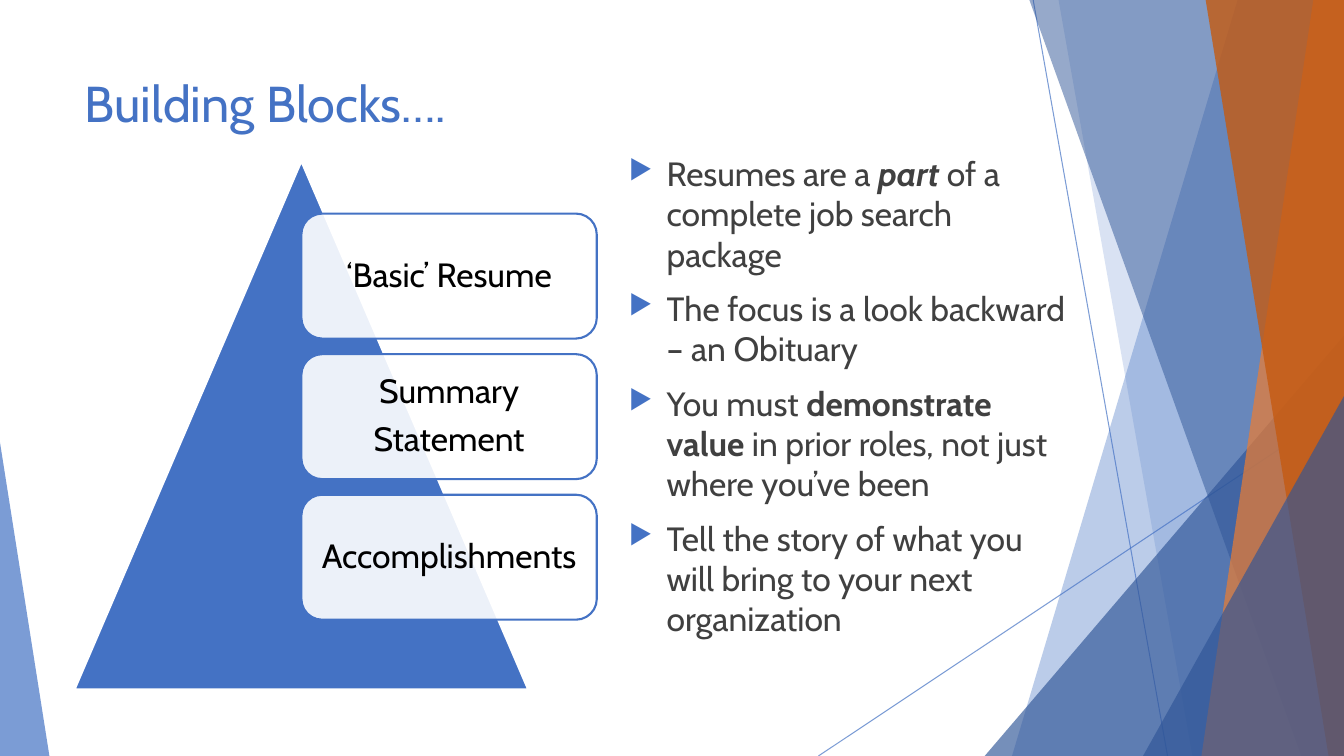
from dataclasses import dataclass
from lxml.etree import SubElement as Sub
from pptx import Presentation
from pptx.dml.color import RGBColor
from pptx.enum.shapes import MSO_CONNECTOR as Link, MSO_SHAPE as Kind
from pptx.enum.text import MSO_ANCHOR as Anchor, PP_ALIGN as Align
from pptx.oxml.ns import qn
from pptx.util import Pt

BLUE = RGBColor(0x44, 0x72, 0xC4)
NAVY = RGBColor(0x2F, 0x55, 0x97)
AMBER = RGBColor(0xED, 0x7D, 0x31)
RUST = RGBColor(0xC5, 0x5A, 0x11)
WHITE = RGBColor(0xFF, 0xFF, 0xFF)
BLACK = RGBColor(0, 0, 0)
GREY = RGBColor(0x40, 0x40, 0x40)
FONT = "Cabin"
WIDE, HIGH = 960, 540


@dataclass
class Ray:
    x1: float
    y1: float
    x2: float
    y2: float


@dataclass
class Band:
    top: float
    base: float
    color: RGBColor
    alpha: int


@dataclass
class Wedge:
    left: float
    top: float
    width: float
    peak: float
    color: RGBColor
    alpha: int


@dataclass
class Bit:
    text: str
    bold: bool = False
    slant: bool = False


RAYS = [Ray(738, 0, 834, HIGH), Ray(WIDE, 290, 584.6, HIGH)]
DECOR = [
    Band(884.2, 722.9, BLUE, 36),
    Band(756, 851.8, BLUE, 20),
    Wedge(703.4, 239.8, 256.6, 1, NAVY, 66),
    Band(735.1, 929.5, NAVY, 50),
    Band(938.2, 858.2, AMBER, 70),
    Band(861.1, 949, RUST, 80),
    Wedge(816.5, 283, 143.5, 1, NAVY, 66),
    Wedge(0, 316.1, 35.3, 0, BLUE, 70),
]
CARDS = [["‘Basic’ Resume"], ["Summary", "Statement"], ["Accomplishments"]]
POINTS = [
    [Bit("Resumes are a "), Bit("part", True, True),
     Bit(" of a complete job search package")],
    [Bit("The focus is a look backward – an Obituary")],
    [Bit("You must "), Bit("demonstrate value ", True),
     Bit("in prior roles, not just where you’ve been")],
    [Bit("Tell the story of what you will bring to your next organization")],
]


def fade(shape, alpha: int) -> None:
    color = next(shape._element.spPr.iter(qn("a:srgbClr")))
    Sub(color, qn("a:alpha"), val=str(alpha * 1000))


def paint(shape, color: RGBColor, alpha: int = 100) -> None:
    shape.shadow.inherit = False
    shape.fill.solid()
    shape.fill.fore_color.rgb = color
    shape.line.fill.background()
    if alpha < 100:
        fade(shape, alpha)


def edge(shape, color: RGBColor, width: float) -> None:
    shape.line.color.rgb = color
    shape.line.width = Pt(width)


def write(para, bit: Bit, size: int, color: RGBColor) -> None:
    run = para.add_run()
    run.text = bit.text
    font = run.font
    font.name, font.size = FONT, Pt(size)
    font.bold, font.italic = bit.bold, bit.slant
    font.color.rgb = color


def draw_ray(slide, ray: Ray) -> None:
    line = slide.shapes.add_connector(
        Link.STRAIGHT, Pt(ray.x1), Pt(ray.y1), Pt(ray.x2), Pt(ray.y2))
    edge(line, BLUE, 0.75)
    fade(line, 70)
    Sub(line._element.spPr, qn("a:effectLst"))


def draw_band(slide, band: Band) -> None:
    roof = Pt(-0.6)
    path = slide.shapes.build_freeform(Pt(band.top), roof)
    path.add_line_segments([
        (Pt(WIDE), roof), (Pt(WIDE), Pt(HIGH)), (Pt(band.base), Pt(HIGH))])
    paint(path.convert_to_shape(), band.color, band.alpha)


def draw_wedge(slide, wedge: Wedge) -> None:
    shape = slide.shapes.add_shape(
        Kind.ISOSCELES_TRIANGLE, Pt(wedge.left), Pt(wedge.top),
        Pt(wedge.width), Pt(HIGH - wedge.top))
    shape.adjustments[0] = wedge.peak
    paint(shape, wedge.color, wedge.alpha)


def draw_card(slide, top: float, lines: list[str]) -> None:
    card = slide.shapes.add_shape(
        Kind.ROUNDED_RECTANGLE, Pt(215.3), Pt(top), Pt(211), Pt(89.3))
    paint(card, WHITE, 90)
    edge(card, BLUE, 1.5)
    frame = card.text_frame
    frame.word_wrap = True
    frame.vertical_anchor = Anchor.MIDDLE
    frame.margin_left = frame.margin_right = Pt(7.2)
    frame.margin_top = frame.margin_bottom = Pt(7.2)
    for i, line in enumerate(lines):
        para = frame.add_paragraph() if i else frame.paragraphs[0]
        para.alignment = Align.CENTER
        para.line_spacing = 0.9
        para.space_after = Pt(8.4)
        write(para, Bit(line), 24, BLACK)


def add_mark(para) -> None:
    props = para._p.get_or_add_pPr()
    props.set("marL", str(Pt(27)))
    props.set("indent", str(Pt(-27)))
    tint = Sub(props, qn("a:buClr"))
    Sub(tint, qn("a:srgbClr"), val=str(BLUE))
    Sub(props, qn("a:buSzPct"), val="80000")
    Sub(props, qn("a:buChar"), char="▶")


def add_box(slide, left: float, top: float, width: float, height: float):
    box = slide.shapes.add_textbox(Pt(left), Pt(top), Pt(width), Pt(height))
    box.text_frame.word_wrap = True
    return box.text_frame


def main() -> None:
    deck = Presentation()
    deck.slide_width, deck.slide_height = Pt(WIDE), Pt(HIGH)
    slide = deck.slides.add_slide(deck.slide_layouts[6])
    for ray in RAYS:
        draw_ray(slide, ray)
    for item in DECOR:
        if isinstance(item, Band):
            draw_band(slide, item)
        else:
            draw_wedge(slide, item)

    title = add_box(slide, 53.3, 48.2, 676.8, 103.7)
    write(title.paragraphs[0], Bit("Building Blocks…."), 36, BLUE)

    peak = slide.shapes.add_shape(
        Kind.ISOSCELES_TRIANGLE, Pt(53.3), Pt(115.2), Pt(324), Pt(377.3))
    paint(peak, BLUE)
    edge(peak, WHITE, 1.5)
    for i, lines in enumerate(CARDS):
        draw_card(slide, 152.6 + i * 100.4, lines)

    body = add_box(slide, 442.1, 105.8, 329.8, 360.7)
    for i, bits in enumerate(POINTS):
        para = body.add_paragraph() if i else body.paragraphs[0]
        para.space_before = Pt(10)
        add_mark(para)
        for bit in bits:
            write(para, bit, 24, GREY)
    deck.save("out.pptx")


if __name__ == "__main__":
    main()
